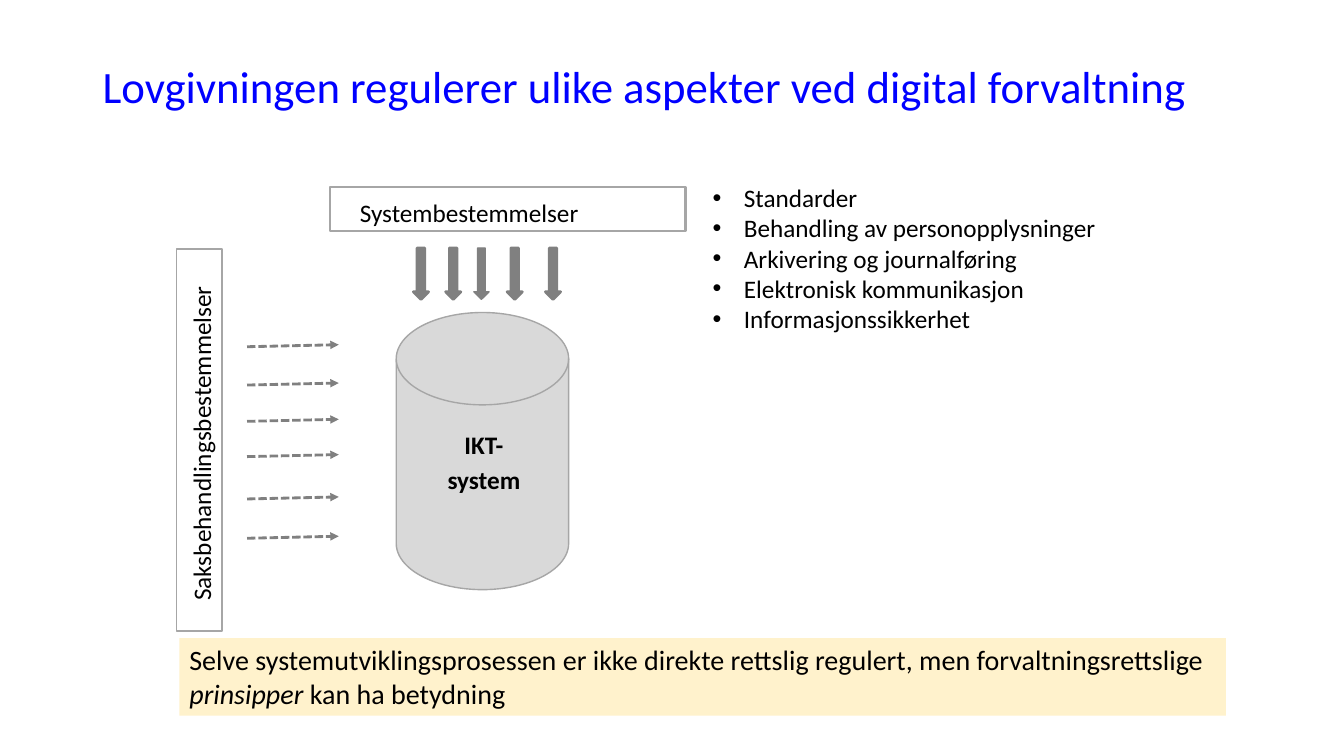
from dataclasses import dataclass

from lxml import etree
from pptx import Presentation
from pptx import util as u
from pptx.dml.color import RGBColor
from pptx.enum import dml, shapes, text
from pptx.oxml.ns import qn

PX = 9144


@dataclass(frozen=True)
class Theme:
    font: str = "Calibri"
    black: str = "000000"
    title: str = "0000FF"
    white: str = "FFFFFF"
    outline: str = "A6A6A6"
    disk: str = "D9D9D9"
    arrow: str = "808080"
    note: str = "FFF2CC"
    title_size: int = 32
    body_size: int = 18
    note_size: int = 20


@dataclass(frozen=True)
class Box:
    left: int
    top: int
    width: int
    height: int
    fill: str
    line: str = ""
    weight: float = 0
    kind: shapes.MSO_SHAPE = shapes.MSO_SHAPE.RECTANGLE
    rotation: int = 0


@dataclass(frozen=True)
class Run:
    words: str
    size: int
    color: str = "000000"
    bold: bool = False
    italic: bool = False


THEME = Theme()


def emu(*lengths: int) -> list[int]:
    return [length * PX for length in lengths]


def draw_box(slide, box: Box):
    shape = slide.shapes.add_shape(box.kind, *emu(box.left, box.top, box.width, box.height))
    shape.shadow.inherit = False
    shape.rotation = box.rotation
    shape.fill.solid()
    shape.fill.fore_color.rgb = RGBColor.from_string(box.fill)
    if box.line:
        shape.line.color.rgb = RGBColor.from_string(box.line)
        shape.line.width = u.Pt(box.weight)
    else:
        shape.line.fill.background()
    return shape


def write(shape, paragraphs: list[list[Run]], align=text.PP_ALIGN.LEFT,
          spacing: float = 1.0, indent: int = 0, bullet: str = "",
          anchor=text.MSO_ANCHOR.TOP) -> None:
    frame = shape.text_frame
    frame.word_wrap = True
    frame.vertical_anchor = anchor
    for index, runs in enumerate(paragraphs):
        paragraph = frame.paragraphs[0] if index == 0 else frame.add_paragraph()
        paragraph.alignment = align
        paragraph.line_spacing = spacing
        properties = paragraph._p.get_or_add_pPr()
        properties.set("marL", str(indent * PX))
        if bullet:
            properties.set("indent", str(-indent * PX))
            etree.SubElement(properties, qn("a:buFont"), typeface="Arial")
            etree.SubElement(properties, qn("a:buChar"), char=bullet)
        for item in runs:
            run = paragraph.add_run()
            run.text = item.words
            run.font.name = THEME.font
            run.font.size = u.Pt(item.size)
            run.font.bold = item.bold
            run.font.italic = item.italic
            run.font.color.rgb = RGBColor.from_string(item.color)


def draw_dashed_arrow(slide, left: int, top: int, width: int, rise: int) -> None:
    arrow = slide.shapes.add_connector(
        shapes.MSO_CONNECTOR.STRAIGHT, *emu(left, top, left + width, top - rise))
    arrow.line.color.rgb = RGBColor.from_string(THEME.arrow)
    arrow.line.width = u.Pt(2)
    arrow.line.dash_style = dml.MSO_LINE.SQUARE_DOT
    etree.SubElement(arrow.line._get_or_add_ln(), qn("a:tailEnd"), type="triangle")
    etree.SubElement(arrow._element.spPr, qn("a:effectLst"))


def main() -> None:
    deck = Presentation()
    deck.slide_width, deck.slide_height = emu(1333, 750)
    slide = deck.slides.add_slide(deck.slide_layouts[6])

    title = slide.shapes.add_textbox(*emu(92, 40, 1150, 97))
    write(title, [[Run("Lovgivningen regulerer ulike aspekter ved digital forvaltning",
                       THEME.title_size, THEME.title)]],
          spacing=0.9, anchor=text.MSO_ANCHOR.MIDDLE)

    system_rules = draw_box(slide, Box(327, 186, 353, 43, THEME.white, THEME.outline, 1.5))
    case_rules = draw_box(
        slide, Box(8, 414, 379, 45, THEME.white, THEME.outline, 1.25, rotation=270))
    for rules, words in ((system_rules, "Systembestemmelser"),
                         (case_rules, "Saksbehandlingsbestemmelser")):
        write(rules, [[Run(words, THEME.body_size)]],
              text.PP_ALIGN.JUSTIFY, spacing=1.15, indent=20)

    draw_box(slide, Box(393, 310, 171, 275, THEME.disk, THEME.outline, 1,
                        shapes.MSO_SHAPE.FLOWCHART_MAGNETIC_DISK))
    ict_system = draw_box(slide, Box(401, 417, 138, 80, THEME.disk))
    write(ict_system, [[Run("IKT-system", THEME.body_size, bold=True)]],
          text.PP_ALIGN.CENTER, spacing=1.15, indent=20)

    for left, weight in ((410, 2), (442, 2), (470, 1), (503, 2), (541, 2)):
        draw_box(slide, Box(left, 246, 15, 51, THEME.arrow, THEME.arrow, weight,
                            shapes.MSO_SHAPE.DOWN_ARROW))
    for top in (344, 382, 418, 453, 495, 534):
        draw_dashed_arrow(slide, 245, top, 91, 2)

    topics = slide.shapes.add_textbox(*emu(697, 176, 405, 192))
    write(topics, [[Run(topic, THEME.body_size)] for topic in (
        "Standarder",
        "Behandling av personopplysninger",
        "Arkivering og journalføring",
        "Elektronisk kommunikasjon",
        "Informasjonssikkerhet",
    )], indent=31, bullet="•")

    note = draw_box(slide, Box(178, 633, 1038, 77, THEME.note))
    write(note, [
        [Run("Selve systemutviklingsprosessen er ikke direkte rettslig regulert, "
             "men forvaltningsrettslige", THEME.note_size)],
        [Run("prinsipper", THEME.note_size, italic=True),
         Run(" kan ha betydning", THEME.note_size)],
    ])

    deck.save("out.pptx")


if __name__ == "__main__":
    main()
